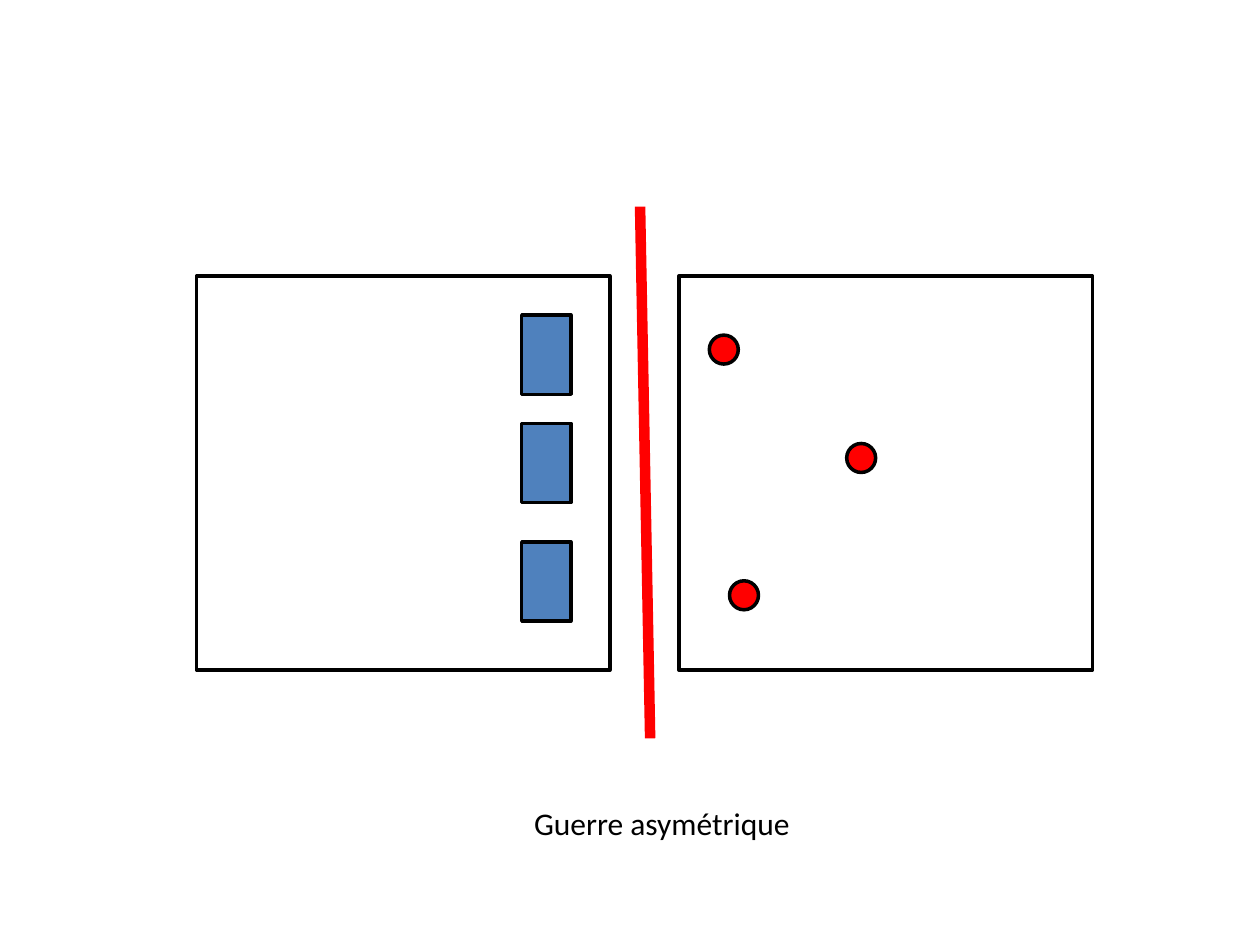
from typing import NamedTuple

from lxml import etree
from pptx import Presentation
from pptx import util as u
from pptx.dml.color import RGBColor
from pptx.enum import shapes, text
from pptx.oxml import ns

BLACK = RGBColor(0x00, 0x00, 0x00)
WHITE = RGBColor(0xFF, 0xFF, 0xFF)
RED = RGBColor(0xFF, 0x00, 0x00)
BLUE = RGBColor(0x4F, 0x81, 0xBD)


class Style(NamedTuple):
    kind: shapes.MSO_SHAPE
    width: float
    height: float
    fill: RGBColor


class Spot(NamedTuple):
    left: float
    top: float


TERRITORY = Style(shapes.MSO_SHAPE.RECTANGLE, 3.28, 3.13, WHITE)
ARMY_UNIT = Style(shapes.MSO_SHAPE.RECTANGLE, 0.39, 0.63, BLUE)
INSURGENT = Style(shapes.MSO_SHAPE.OVAL, 0.23, 0.23, RED)

TERRITORIES = [Spot(left, 2.19) for left in (1.56, 5.39)]
ARMY_UNITS = [Spot(4.14, top) for top in (2.5, 3.36, 4.3)]
INSURGENTS = [Spot(5.63, 2.66), Spot(5.79, 4.61), Spot(6.72, 3.52)]


def add_group(s, style: Style, spots: list[Spot]) -> None:
    for spot in spots:
        sp = s.shapes.add_shape(
            style.kind, u.Inches(spot.left), u.Inches(spot.top),
            u.Inches(style.width), u.Inches(style.height))
        sp.shadow.inherit = False
        sp.fill.solid()
        sp.fill.fore_color.rgb = style.fill
        sp.line.color.rgb = BLACK
        sp.line.width = u.Pt(2)


def add_front_line(s, start: Spot, end: Spot) -> None:
    line = s.shapes.add_connector(
        shapes.MSO_CONNECTOR.STRAIGHT, u.Inches(start.left), u.Inches(start.top),
        u.Inches(end.left), u.Inches(end.top))
    line.line.color.rgb = RED
    line.line.width = u.Pt(6)
    etree.SubElement(line._element.spPr, ns.qn("a:effectLst"))


def add_caption(s, spot: Spot, caption: str) -> None:
    box = s.shapes.add_textbox(
        u.Inches(spot.left), u.Inches(spot.top), u.Inches(2.31), u.Inches(0.4))
    tf = box.text_frame
    tf.word_wrap = False
    tf.auto_size = text.MSO_AUTO_SIZE.SHAPE_TO_FIT_TEXT
    p = tf.paragraphs[0]
    r = p.add_run()
    r.text = caption
    r.font.name = "Calibri"
    r.font.size = u.Pt(18)
    r.font.color.rgb = BLACK


def main() -> None:
    prs = Presentation()
    prs.slide_width = u.Inches(10)
    prs.slide_height = u.Inches(7.5)
    s = prs.slides.add_slide(prs.slide_layouts[6])
    add_group(s, TERRITORY, TERRITORIES)
    add_front_line(s, Spot(5.08, 1.64), Spot(5.16, 5.86))
    add_group(s, ARMY_UNIT, ARMY_UNITS)
    add_group(s, INSURGENT, INSURGENTS)
    add_caption(s, Spot(4.14, 6.33), "Guerre asymétrique")
    prs.save("out.pptx")


if __name__ == "__main__":
    main()
